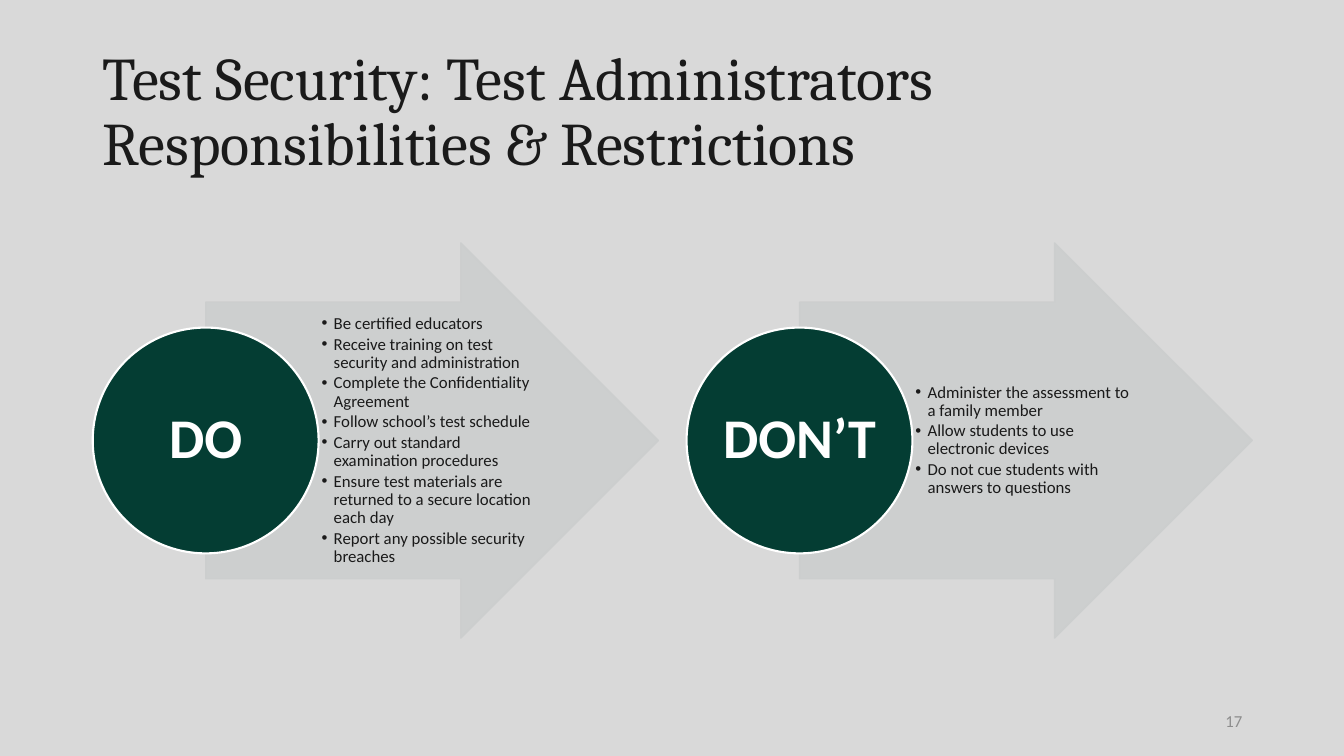
from lxml import etree
from pptx import Presentation
from pptx.dml.color import RGBColor
from pptx.enum.shapes import MSO_SHAPE
from pptx.enum.text import MSO_ANCHOR, MSO_AUTO_SIZE, PP_ALIGN
from pptx.oxml.ns import qn
from pptx.util import Inches, Pt

TITLE = "Test Security: Test Administrators Responsibilities & Restrictions"
PANELS = [
    ("DO", [
        "Be certified educators",
        "Receive training on test security and administration",
        "Complete the Confidentiality Agreement",
        "Follow school’s test schedule",
        "Carry out standard examination procedures",
        "Ensure test materials are returned to a secure location each day",
        "Report any possible security breaches",
    ]),
    ("DON’T", [
        "Administer the assessment to a family member",
        "Allow students to use electronic devices",
        "Do not cue students with answers to questions",
    ]),
]
PAGE_NUMBER = "17"

BACKGROUND = RGBColor(0xD9, 0xD9, 0xD9)
INK = RGBColor(0x1A, 0x1A, 0x1A)
ARROW_GRAY = RGBColor(0xCC, 0xCE, 0xCE)
GREEN = RGBColor(0x04, 0x3D, 0x33)
WHITE = RGBColor(0xFF, 0xFF, 0xFF)
NUMBER_GRAY = RGBColor(0x8D, 0x8D, 0x8D)

LEFT, PITCH = 0.92, 5.89
CIRCLE = 2.24
ARROW_W, ARROW_H = 4.49, 3.92
LIST_W, LIST_H = 2.19, 2.75
MIDDLE = 4.37


def place(shape, x, y, w, h):
    shape.left, shape.top = Inches(x), Inches(y)
    shape.width, shape.height = Inches(w), Inches(h)


def set_frame(tf, margins=(0.1, 0.05, 0.1, 0.05)):
    tf.word_wrap = True
    tf.auto_size = MSO_AUTO_SIZE.NONE
    tf.vertical_anchor = MSO_ANCHOR.MIDDLE
    tf.margin_left, tf.margin_top, tf.margin_right, tf.margin_bottom = map(Inches, margins)


def write(p, text, size, color, font="Calibri", bold=False, align=PP_ALIGN.LEFT, spacing=0.9):
    p.alignment = align
    p.line_spacing = spacing
    p.space_before = Pt(0)
    r = p.add_run()
    r.text = text
    r.font.name, r.font.size, r.font.bold = font, Pt(size), bold
    r.font.color.rgb = color


def add_bullet(p, indent):
    pPr = p._p.get_or_add_pPr()
    pPr.set("marL", str(Inches(indent)))
    pPr.set("indent", str(-Inches(indent)))
    etree.SubElement(pPr, qn("a:buChar")).set("char", "•")


def add_figure(s, kind, box, fill, line, line_width):
    shape = s.shapes.add_shape(kind, *map(Inches, box))
    shape.shadow.inherit = False
    shape.fill.solid()
    shape.fill.fore_color.rgb = fill
    shape.line.color.rgb = line
    shape.line.width = Pt(line_width)
    return shape


def add_panel(s, body, x, label, items):
    """Arrow at the back, then the list, then the labelled circle."""
    arrow = add_figure(s, MSO_SHAPE.RIGHT_ARROW,
                       (x + CIRCLE / 2, MIDDLE - ARROW_H / 2, ARROW_W, ARROW_H),
                       ARROW_GRAY, ARROW_GRAY, 1)
    arrow.adjustments[0], arrow.adjustments[1] = 0.7, 0.5
    for color in arrow.element.spPr.iter(qn("a:srgbClr")):
        etree.SubElement(color, qn("a:alpha")).set("val", "90000")

    arrow.element.addnext(body.element)
    place(body, x + CIRCLE, MIDDLE - LIST_H / 2, LIST_W, LIST_H)
    tf = body.text_frame
    set_frame(tf, (0.03, 0.01, 0.02, 0.01))
    for i, item in enumerate(items):
        p = tf.add_paragraph() if i else tf.paragraphs[0]
        p.level = 1
        add_bullet(p, 0.12)
        write(p, item, 12, INK)
        p.space_after = Pt(1.8)

    circle = add_figure(s, MSO_SHAPE.OVAL, (x, MIDDLE - CIRCLE / 2, CIRCLE, CIRCLE),
                        GREEN, WHITE, 1.5)
    set_frame(circle.text_frame, (0.03,) * 4)
    write(circle.text_frame.paragraphs[0], label, 40, WHITE, bold=True, align=PP_ALIGN.CENTER)


def main():
    prs = Presentation()
    prs.slide_width, prs.slide_height = Inches(13.33), Inches(7.5)
    s = prs.slides.add_slide(prs.slide_layouts[3])
    s.background.fill.solid()
    s.background.fill.fore_color.rgb = BACKGROUND

    title = s.shapes.title
    place(title, LEFT, 0.4, 11.5, 1.45)
    set_frame(title.text_frame)
    write(title.text_frame.paragraphs[0], TITLE, 43.2, INK, font="Cambria")

    for i, (label, items) in enumerate(PANELS):
        add_panel(s, s.placeholders[i + 1], LEFT + i * PITCH, label, items)

    number = s.shapes.add_textbox(Inches(9.42), Inches(6.95), Inches(3), Inches(0.4))
    set_frame(number.text_frame)
    write(number.text_frame.paragraphs[0], PAGE_NUMBER, 12, NUMBER_GRAY,
          align=PP_ALIGN.RIGHT, spacing=1.0)

    prs.save("out.pptx")


if __name__ == "__main__":
    main()
